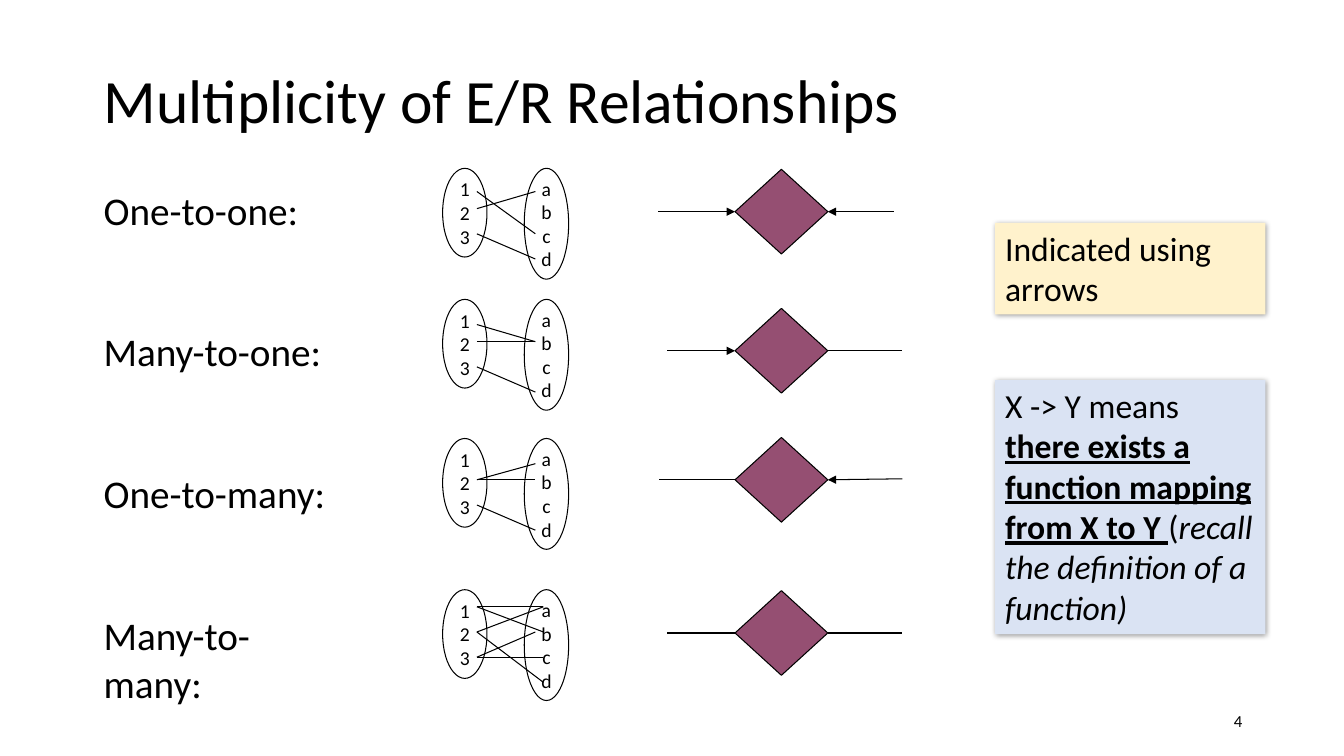
from dataclasses import dataclass
from typing import Optional

from lxml.etree import SubElement
from pptx import Presentation
from pptx.dml.color import RGBColor
from pptx.enum.shapes import MSO_CONNECTOR, MSO_SHAPE
from pptx.enum.text import MSO_ANCHOR, MSO_AUTO_SIZE, PP_ALIGN
from pptx.oxml.ns import qn
from pptx.util import Emu, Pt

SCALE = 9144
FONT = "Calibri"
BLACK = "000000"
PLUM = "954F72"
THIN = 0.75
LINK_X = 473
NEAR, FAR = 531, 539


@dataclass(frozen=True)
class Link:
    start: int
    end: int
    right: int = NEAR


@dataclass(frozen=True)
class End:
    x: int
    y: int
    arrow: bool = False
    width: float = THIN


@dataclass(frozen=True)
class Row:
    label: str
    text_y: int
    oval_y: int
    gem_y: int
    left: End
    right: End
    links: tuple[Link, ...]


@dataclass(frozen=True)
class Run:
    text: str
    bold: bool = False
    italic: bool = False
    under: bool = False


@dataclass(frozen=True)
class Note:
    y: int
    height: int
    fill: str
    runs: tuple[Run, ...]


ROWS = (
    Row("One-to-one:", 180, 167, 168,
        End(653, 210, True, 1), End(887, 210, True),
        (Link(23, 65), Link(40, 23), Link(65, 90))),
    Row("Many-to-one:", 320, 297, 306,
        End(662, 348, True), End(895, 348),
        (Link(25, 42), Link(42, 42), Link(67, 92))),
    Row("One-to-many:", 461, 435, 434,
        End(654, 476), End(895, 475, True),
        (Link(41, 25), Link(41, 41), Link(66, 91))),
    Row("Many-to-many:", 602, 585, 586,
        End(662, 628), End(895, 628),
        (Link(17, 42, FAR), Link(17, 17, FAR), Link(42, 17, FAR),
         Link(42, 92, FAR), Link(67, 42), Link(67, 67, FAR))),
)

NOTES = (
    Note(221, 91, "FFF2CC", (Run("Indicated using arrows"),)),
    Note(377, 252, "DAE3F3", (
        Run("X -> Y means "),
        Run("there exists a function mapping from X to Y ", bold=True, under=True),
        Run("("),
        Run("recall the definition of a function)", italic=True))),
)


def px(*values: int) -> list[Emu]:
    return [Emu(value * SCALE) for value in values]


def tint(code: str) -> RGBColor:
    return RGBColor.from_string(code)


def write(shape, *paras: tuple[Run, ...], size: int, align=PP_ALIGN.LEFT,
          anchor=MSO_ANCHOR.TOP, wrap: bool = True,
          spacing: Optional[float] = None) -> None:
    frame = shape.text_frame
    frame.auto_size = MSO_AUTO_SIZE.NONE
    frame.word_wrap = wrap
    frame.vertical_anchor = anchor
    for index, runs in enumerate(paras):
        para = frame.add_paragraph() if index else frame.paragraphs[0]
        para.alignment = align
        if spacing:
            para.line_spacing = spacing
        for item in runs:
            run = para.add_run()
            run.text = item.text
            font = run.font
            font.name, font.size = FONT, Pt(size)
            font.bold, font.italic, font.underline = item.bold, item.italic, item.under
            font.color.rgb = tint(BLACK)


def draw(shapes, kind, box: tuple[int, int, int, int],
         fill: Optional[str] = None, line: Optional[str] = BLACK):
    shape = shapes.add_shape(kind, *px(*box))
    shape.shadow.inherit = False
    if fill:
        shape.fill.solid()
        shape.fill.fore_color.rgb = tint(fill)
    else:
        shape.fill.background()
    if line:
        shape.line.color.rgb = tint(line)
        shape.line.width = Pt(THIN)
    else:
        shape.line.fill.background()
    return shape


def join(shapes, x1: int, y1: int, x2: int, y2: int,
         width: float = THIN, arrow: bool = False):
    wire = shapes.add_connector(MSO_CONNECTOR.STRAIGHT, *px(x1, y1, x2, y2))
    wire.line.color.rgb = tint(BLACK)
    wire.line.width = Pt(width)
    if arrow:
        SubElement(wire.line._get_or_add_ln(), qn("a:headEnd"),
                   type="triangle", w="med", len="med")
    SubElement(wire._element.spPr, qn("a:effectLst"))
    return wire


def oval(shapes, x: int, y: int, height: int, items: str) -> None:
    shape = draw(shapes, MSO_SHAPE.OVAL, (x, y, 44, height))
    write(shape, *((Run(item),) for item in items), size=14,
          align=PP_ALIGN.CENTER, anchor=MSO_ANCHOR.MIDDLE, wrap=False)


def add_row(slide, row: Row) -> None:
    shapes = slide.shapes.add_group_shape().shapes
    gem = draw(shapes, MSO_SHAPE.DIAMOND, (729, row.gem_y, 92, 84), PLUM)
    for side, x, end in ((1, 729, row.left), (3, 821, row.right)):
        wire = join(shapes, x, row.gem_y + 42, end.x, end.y, end.width, end.arrow)
        wire.begin_connect(gem, side)
    oval(shapes, 439, row.oval_y, 88, "123")
    oval(shapes, 520, row.oval_y, 110, "abcd")
    for link in row.links:
        join(shapes, LINK_X, row.oval_y + link.start, link.right, row.oval_y + link.end)
    label = shapes.add_textbox(*px(93, row.text_y, 250, 57))
    write(label, (Run(row.label),), size=28)


def add_note(slide, note: Note) -> None:
    shape = draw(slide.shapes, MSO_SHAPE.RECTANGLE,
                 (987, note.y, 268, note.height), note.fill, None)
    effects = shape._element.spPr.find(qn("a:effectLst"))
    shade = SubElement(effects, qn("a:outerShdw"), blurRad="50800", dist="12700",
                       dir="2700000", algn="tl", rotWithShape="0")
    color = SubElement(shade, qn("a:srgbClr"), val=BLACK)
    SubElement(color, qn("a:alpha"), val="40000")
    write(shape, note.runs, size=24)


def main() -> None:
    deck = Presentation()
    deck.slide_width, deck.slide_height = px(1333, 750)
    slide = deck.slides.add_slide(deck.slide_layouts[5])
    title = slide.shapes.title
    title.left, title.top, title.width, title.height = px(93, 40, 1133, 125)
    write(title, (Run("Multiplicity of E/R Relationships"),), size=44,
          anchor=MSO_ANCHOR.MIDDLE, spacing=0.9)
    number = slide.shapes.add_textbox(*px(942, 695, 300, 40))
    write(number, (Run("4"),), size=12, align=PP_ALIGN.RIGHT, anchor=MSO_ANCHOR.MIDDLE)
    for row in ROWS:
        add_row(slide, row)
    for note in NOTES:
        add_note(slide, note)
    deck.save("out.pptx")


if __name__ == "__main__":
    main()
